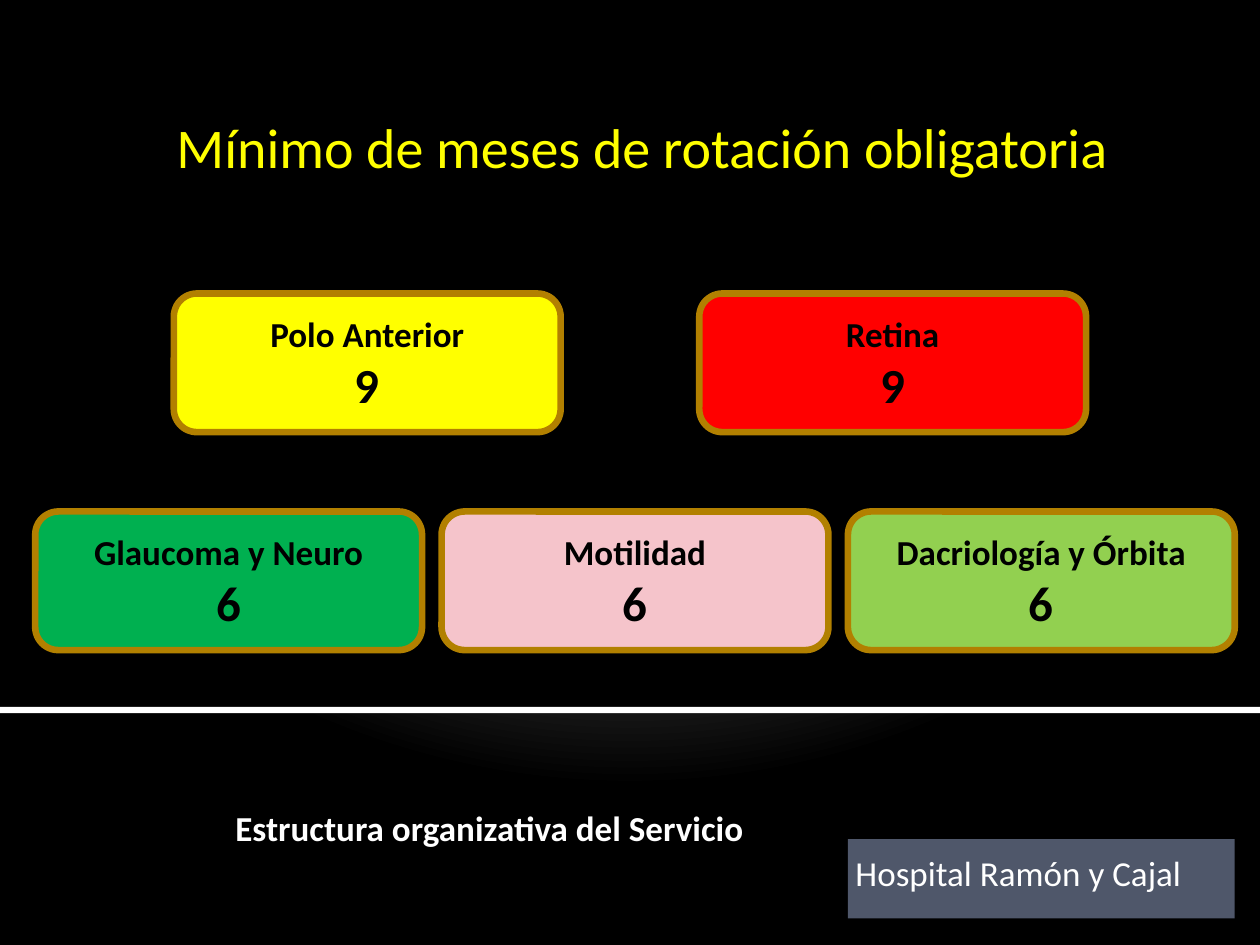
from lxml import etree
from pptx import Presentation
from pptx.dml.color import RGBColor
from pptx.enum.shapes import MSO_SHAPE
from pptx.enum.text import MSO_ANCHOR, MSO_AUTO_SIZE, PP_ALIGN
from pptx.oxml import parse_xml
from pptx.util import Inches, Pt

RECTANGLE = MSO_SHAPE.RECTANGLE
CARD_SHAPE = MSO_SHAPE.FLOWCHART_ALTERNATE_PROCESS
TOP, MIDDLE = MSO_ANCHOR.TOP, MSO_ANCHOR.MIDDLE
LEFT, CENTER = PP_ALIGN.LEFT, PP_ALIGN.CENTER
NO_AUTOFIT = MSO_AUTO_SIZE.NONE

WIDTH, HEIGHT = 10, 7.5
FONT = "Calibri"
COLORS = {
    "black": "000000", "white": "FFFFFF", "yellow": "FFFF00", "red": "FF0000",
    "green": "00B050", "pink": "F5C4CB", "lime": "92D050",
    "border": "B28000", "slate": "4F576A",
}
GLOW_STOPS = [(0, "C0C0C0"), (12, "C0C0C0"), (20, "BEBEBE"), (100, "000000")]
CARD_WIDTH, CARD_HEIGHT = 3.07, 1.1
CARD_ROWS = [
    (1.38, 4.17, 2.33, [("Polo Anterior", "9", "yellow"), ("Retina", "9", "red")]),
    (0.28, 3.225, 4.06, [("Glaucoma y Neuro", "6", "green"),
                         ("Motilidad", "6", "pink"),
                         ("Dacriología y Órbita", "6", "lime")]),
]


def color(name):
    """Return the palette colour with this name."""
    return RGBColor.from_string(COLORS[name])


def set_background(slide):
    """Give the slide a round glow that starts above its top edge."""
    slide.background.fill.solid()
    solid = slide.background.fill._xPr.find("{*}solidFill")
    namespace = etree.QName(solid).namespace
    stops = "".join(
        f'<a:gs pos="{share * 1000}"><a:srgbClr val="{value}"/></a:gs>'
        for share, value in GLOW_STOPS)
    gradient = parse_xml(
        f'<a:gradFill xmlns:a="{namespace}" rotWithShape="1"><a:gsLst>{stops}</a:gsLst>'
        '<a:path path="circle"><a:fillToRect l="10000" t="-25000" r="10000" b="125000"/>'
        '</a:path></a:gradFill>')
    solid.getparent().replace(solid, gradient)


def format_paragraph(paragraph, size, color_name, bold=False, alignment=LEFT):
    """Set the alignment and font of a paragraph."""
    paragraph.alignment = alignment
    for run in paragraph.runs:
        run.font.name = FONT
        run.font.size = Pt(size)
        run.font.bold = bold
        run.font.color.rgb = color(color_name)


def add_block(slide, kind, left, top, width, height, fill):
    """Add a filled shape without outline or shadow."""
    shape = slide.shapes.add_shape(
        kind, Inches(left), Inches(top), Inches(width), Inches(height))
    shape.shadow.inherit = False
    shape.fill.solid()
    shape.fill.fore_color.rgb = color(fill)
    shape.line.fill.background()
    return shape


def place_title(slide, text):
    """Move and format the title placeholder."""
    title = slide.shapes.title
    title.left, title.top = Inches(1.3), Inches(0.84)
    title.width, title.height = Inches(7.95), Inches(0.64)
    frame = title.text_frame
    frame.text = text
    frame.auto_size = NO_AUTOFIT
    frame.vertical_anchor = TOP
    format_paragraph(frame.paragraphs[0], 32, "yellow")


def add_card(slide, left, top, area, months, fill):
    """Add a rounded card with an area and its number of months."""
    card = add_block(slide, CARD_SHAPE, left, top, CARD_WIDTH, CARD_HEIGHT, fill)
    card.line.color.rgb = color("border")
    card.line.width = Pt(3.78)
    frame = card.text_frame
    frame.text = f"{area}\n{months}"
    frame.vertical_anchor = MIDDLE
    for paragraph, size in zip(frame.paragraphs, (20, 28)):
        format_paragraph(paragraph, size, "black", True, CENTER)


def add_caption(slide, text):
    """Add the bold caption under the rule."""
    box = slide.shapes.add_textbox(Inches(1.77), Inches(6.35), Inches(5.2), Inches(0.44))
    frame = box.text_frame
    frame.word_wrap = True
    frame.text = text
    format_paragraph(frame.paragraphs[0], 20, "white", True)


def add_hospital_label(slide, text):
    """Add the slate label in the lower right corner."""
    label = add_block(slide, RECTANGLE, 6.73, 6.66, CARD_WIDTH, 0.63, "slate")
    frame = label.text_frame
    frame.margin_left, frame.margin_top = Inches(0.06), Inches(0.1)
    frame.vertical_anchor = TOP
    frame.text = text
    format_paragraph(frame.paragraphs[0], 20, "white")


def main():
    """Build and save the slide."""
    presentation = Presentation()
    presentation.slide_width, presentation.slide_height = Inches(WIDTH), Inches(HEIGHT)
    slide = presentation.slides.add_slide(presentation.slide_layouts[5])
    set_background(slide)
    panel = add_block(slide, RECTANGLE, 0, 0, WIDTH, HEIGHT * 0.75, "black")
    slide.shapes.title.element.addprevious(panel.element)
    add_block(slide, RECTANGLE, 0, 5.61, WIDTH, 0.05, "white")
    place_title(slide, "Mínimo de meses de rotación obligatoria")
    add_caption(slide, "Estructura organizativa del Servicio")
    for left, step, top, cards in CARD_ROWS:
        for column, (area, months, fill) in enumerate(cards):
            add_card(slide, left + column * step, top, area, months, fill)
    add_hospital_label(slide, "Hospital Ramón y Cajal")
    presentation.save("out.pptx")


if __name__ == "__main__":
    main()
